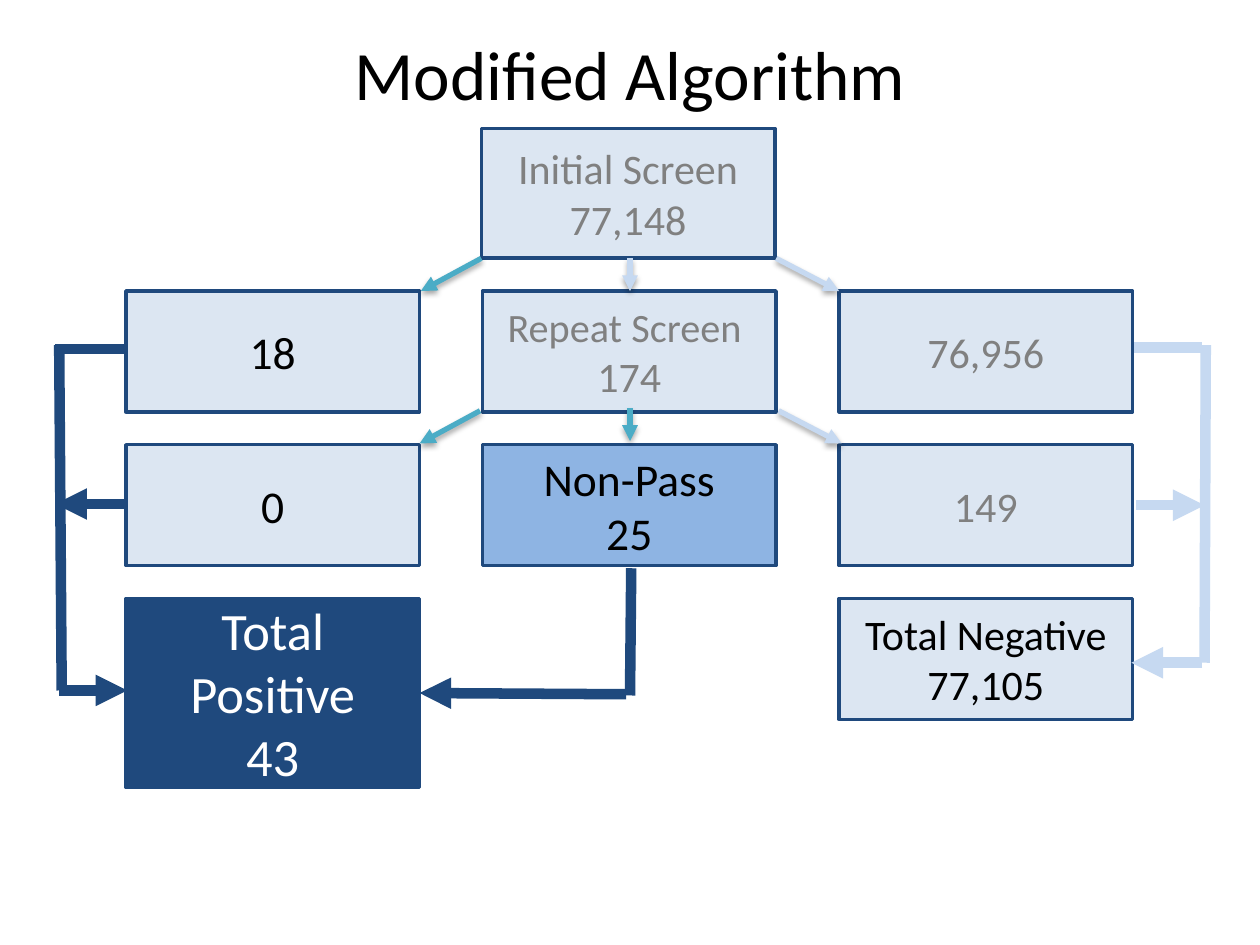
"""Build the Modified Algorithm screening flow slide."""
from dataclasses import dataclass

from lxml import etree
from pptx import Presentation
from pptx.dml.color import RGBColor
from pptx.enum.shapes import MSO_CONNECTOR, MSO_SHAPE
from pptx.enum.text import MSO_ANCHOR, MSO_AUTO_SIZE, PP_ALIGN
from pptx.oxml.ns import qn
from pptx.util import Pt

RECT = MSO_SHAPE.RECTANGLE
LINE = MSO_CONNECTOR.STRAIGHT
MID = MSO_ANCHOR.MIDDLE
CENTER = PP_ALIGN.CENTER
FIXED = MSO_AUTO_SIZE.NONE
SCALE = 9144
TITLE_ONLY = 5


@dataclass(frozen=True)
class Theme:
    font: str = "Calibri"
    black: str = "000000"
    white: str = "FFFFFF"
    gray: str = "808080"
    navy: str = "1F497D"
    blue: str = "8EB4E3"
    pale: str = "DCE6F2"
    ice: str = "C6D9F1"
    teal: str = "4BACC6"
    head: float = 39.6
    total: int = 30
    large: int = 26
    base: int = 24
    small: int = 23
    edge: int = 2
    thin: int = 3
    thick: int = 6


T = Theme()
WIDE, TALL = 233, 96
LEFT, TOP = 100, 231
STEP, DROP = 283, 122

BOXES = [
    (1, 0, TALL, T.pale, T.gray, [("Repeat Screen ", T.small), ("174", T.base)]),
    (0, 0, TALL, T.pale, T.black, [("18", T.large)]),
    (2, 0, TALL, T.pale, T.gray, [("76,956", T.base)]),
    (0, 1, TALL, T.pale, T.black, [("0", T.large)]),
    (1, 1, TALL, T.blue, T.black, [("Non-Pass", T.large), ("25", T.large)]),
    (2, 1, TALL, T.pale, T.gray, [("149", T.base)]),
    (0, 2, 150, T.navy, T.white, [("Total Positive", T.total), ("43", T.total)]),
    (2, 2, TALL, T.pale, T.black, [("Total Negative", T.base), ("77,105", T.base)]),
]

FLOWS = [
    (616, 205, 666, 231, T.ice), (500, 205, 500, 231, T.ice),
    (382, 205, 334, 231, T.teal), (381, 326, 333, 352, T.teal),
    (500, 324, 500, 350, T.teal), (618, 326, 668, 352, T.ice),
]

PATHS = [
    (900, 276, 954, 276, T.ice, False), (902, 401, 956, 401, T.ice, True),
    (957, 274, 956, 526, T.ice, False), (954, 526, 898, 526, T.ice, True),
    (100, 277, 44, 277, T.navy, False), (100, 400, 44, 400, T.navy, True),
    (47, 548, 101, 548, T.navy, True), (47, 274, 49, 548, T.navy, False),
    (497, 551, 333, 550, T.navy, True), (501, 451, 500, 552, T.navy, False),
]


def px(*nums):
    """Turn px lengths into EMU."""
    return [num * SCALE for num in nums]


def rgb(code):
    """Turn a hex code into a colour."""
    return RGBColor.from_string(code)


def put(item, vals):
    """Set each format value on an item."""
    for name, val in vals.items():
        setattr(item, name, val)


def write(shape, rows, color):
    """Fill a shape with centred lines of text."""
    frame = shape.text_frame
    put(frame, {"word_wrap": True, "auto_size": FIXED, "vertical_anchor": MID})
    for num, (text, size) in enumerate(rows):
        para = frame.add_paragraph() if num else frame.paragraphs[0]
        para.alignment = CENTER
        run = para.add_run()
        run.text = text
        put(run.font, {"name": T.font, "size": Pt(size)})
        run.font.color.rgb = rgb(color)


def add_title(slide, text):
    """Place and fill the title."""
    title = slide.shapes.title
    spot = px(50, 17, 900, 81)
    put(title, dict(zip(("left", "top", "width", "height"), spot)))
    write(title, [(text, T.head)], T.black)


def add_box(slide, area, fill, color, rows):
    """Draw one outlined box with text."""
    box = slide.shapes.add_shape(RECT, *px(*area))
    box.shadow.inherit = False
    box.fill.solid()
    box.fill.fore_color.rgb = rgb(fill)
    box.line.width = Pt(T.edge)
    box.line.color.rgb = rgb(T.navy)
    write(box, rows, color)


def add_shade(effects):
    """Add a soft shadow that falls straight down."""
    shade = etree.SubElement(effects, qn("a:outerShdw"), blurRad="40000",
                             dist="23000", dir="5400000", rotWithShape="0")
    tint = etree.SubElement(shade, qn("a:srgbClr"), val=T.black)
    etree.SubElement(tint, qn("a:alpha"), val="35000")


def add_line(slide, ends, color, width, arrow=True, shade=False):
    """Draw a line with an optional arrowhead and shadow."""
    line = slide.shapes.add_connector(LINE, *px(*ends))
    line.line.width = Pt(width)
    line.line.color.rgb = rgb(color)
    if arrow:
        etree.SubElement(line.line._get_or_add_ln(), qn("a:tailEnd"), type="triangle")
    effects = etree.SubElement(line._element.spPr, qn("a:effectLst"))
    if shade:
        add_shade(effects)


def main():
    """Build and save the slide."""
    deck = Presentation()
    put(deck, dict(zip(("slide_width", "slide_height"), px(1000, 750))))
    slide = deck.slides.add_slide(deck.slide_layouts[TITLE_ONLY])
    add_title(slide, "Modified Algorithm")
    add_box(slide, (382, 102, WIDE, 103), T.pale, T.gray,
            [("Initial Screen", T.base), ("77,148", T.base)])
    for col, row, high, fill, color, rows in BOXES:
        area = (LEFT + col * STEP, TOP + row * DROP, WIDE, high)
        add_box(slide, area, fill, color, rows)
    for *ends, color in FLOWS:
        add_line(slide, ends, color, T.thin, shade=True)
    for *ends, color, arrow in PATHS:
        add_line(slide, ends, color, T.thick, arrow)
    deck.save("out.pptx")


if __name__ == "__main__":
    main()
